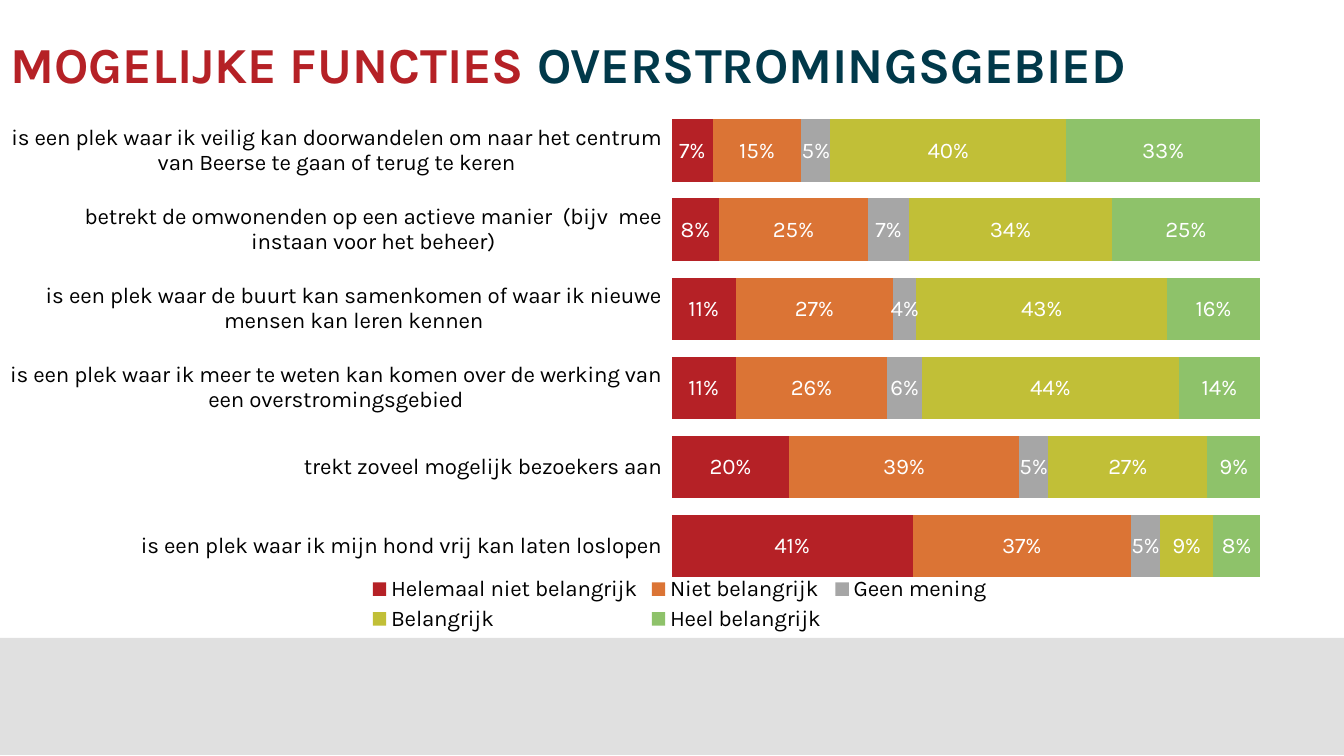
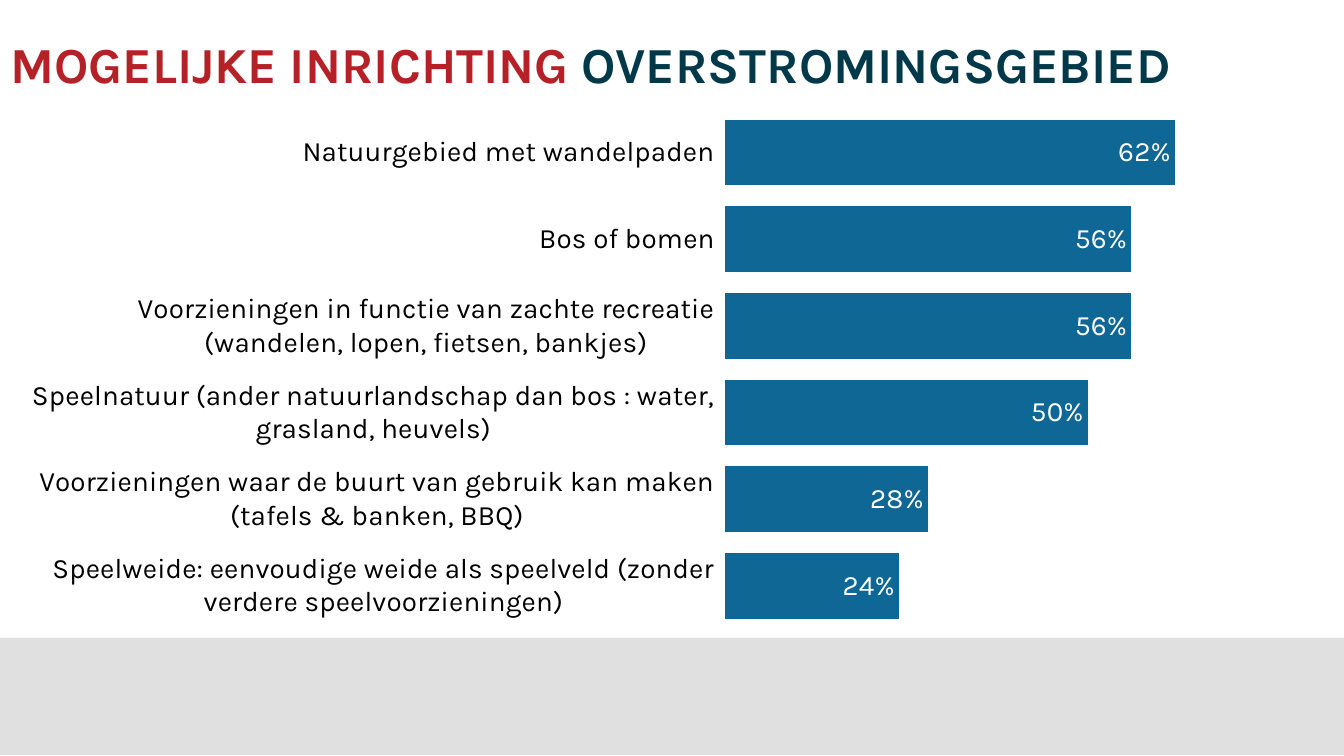
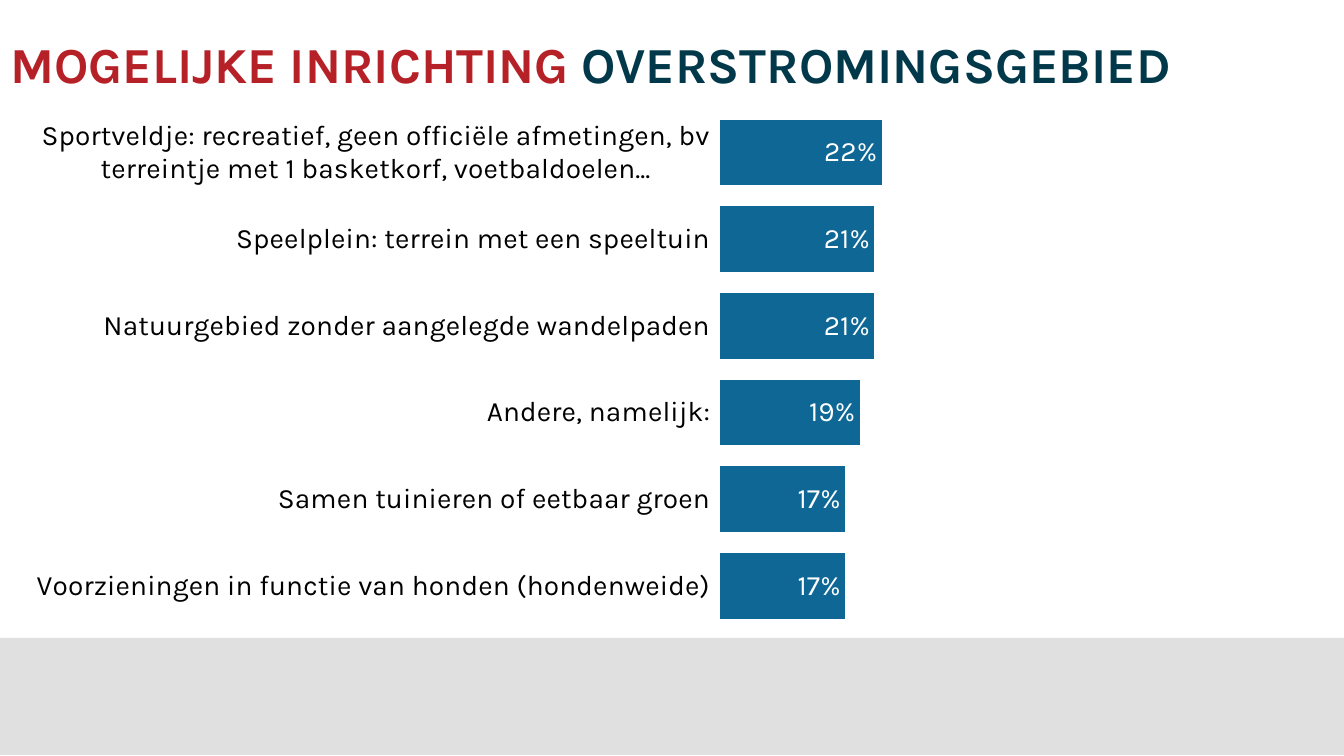
import dataclasses

import lxml.etree
import pptx
import pptx.chart.data
import pptx.dml.color
import pptx.enum.chart
import pptx.enum.shapes
import pptx.enum.text
import pptx.oxml.ns
import pptx.util


def color(value):
    return pptx.dml.color.RGBColor.from_string(value)


def px(length):
    return pptx.util.Emu(round(length * 914400 / 100.8))


@dataclasses.dataclass(frozen=True)
class Theme:
    font: str = "Karla"
    red: str = "B52126"
    navy: str = "01394A"
    orange: str = "DB7435"
    grey: str = "A6A6A6"
    olive: str = "C1BF37"
    green: str = "8EC26A"
    blue: str = "0E6794"
    black: str = "000000"
    white: str = "FFFFFF"
    title_size: int = 36
    stacked_size: int = 16
    bar_size: int = 20


theme = Theme()
qn = pptx.oxml.ns.qn
ChartType = pptx.enum.chart.XL_CHART_TYPE
LabelPosition = pptx.enum.chart.XL_LABEL_POSITION

importance = {
    "type": ChartType.BAR_STACKED_100,
    "frame": (10, 99, 1334, 537),
    "plot": (0.494, 0.023, 0.443, 0.883),
    "size": theme.stacked_size,
    "gap": 26,
    "overlap": 100,
    "maximum": 1,
    "format": "0%",
    "label": LabelPosition.CENTER,
    "legend": True,
}
preference = {
    "type": ChartType.BAR_CLUSTERED,
    "frame": (32, 102, 1223, 552),
    "plot": (0.563, 0.013, 0.419, 0.942),
    "size": theme.bar_size,
    "gap": 32,
    "overlap": 0,
    "maximum": 0.7,
    "format": "###0%",
    "label": LabelPosition.INSIDE_END,
    "legend": False,
}

pages = [
    (
        "MOGELIJKE FUNCTIES ",
        importance,
        [
            "is een plek waar ik veilig kan doorwandelen om naar het centrum van Beerse te gaan of terug te keren",
            "betrekt de omwonenden op een actieve manier  (bijv  mee instaan voor het beheer)",
            "is een plek waar de buurt kan samenkomen of waar ik nieuwe mensen kan leren kennen",
            "is een plek waar ik meer te weten kan komen over de werking van een overstromingsgebied",
            "trekt zoveel mogelijk bezoekers aan",
            "is een plek waar ik mijn hond vrij kan laten loslopen",
        ],
        [
            ("Helemaal niet belangrijk", theme.red, (0.07, 0.08, 0.11, 0.11, 0.2, 0.41)),
            ("Niet belangrijk", theme.orange, (0.15, 0.25, 0.27, 0.26, 0.39, 0.37)),
            ("Geen mening", theme.grey, (0.05, 0.07, 0.04, 0.06, 0.05, 0.05)),
            ("Belangrijk", theme.olive, (0.4, 0.34, 0.43, 0.44, 0.27, 0.09)),
            ("Heel belangrijk", theme.green, (0.33, 0.25, 0.16, 0.14, 0.09, 0.08)),
        ],
    ),
    (
        "MOGELIJKE INRICHTING ",
        preference,
        [
            "Natuurgebied met wandelpaden",
            "Bos of bomen",
            "Voorzieningen in functie van zachte recreatie (wandelen, lopen, fietsen, bankjes)",
            "Speelnatuur (ander natuurlandschap dan bos : water, grasland, heuvels)",
            "Voorzieningen waar de buurt van gebruik kan maken (tafels & banken, BBQ)",
            "Speelweide: eenvoudige weide als speelveld (zonder verdere speelvoorzieningen)",
        ],
        [("Series 1", theme.blue, (0.62, 0.56, 0.56, 0.5, 0.28, 0.24))],
    ),
    (
        "MOGELIJKE INRICHTING ",
        preference,
        [
            "Sportveldje: recreatief, geen officiële afmetingen, bv terreintje met 1 basketkorf, voetbaldoelen...",
            "Speelplein: terrein met een speeltuin",
            "Natuurgebied zonder aangelegde wandelpaden",
            "Andere, namelijk:",
            "Samen tuinieren of eetbaar groen",
            "Voorzieningen in functie van honden (hondenweide)",
        ],
        [("Series 1", theme.blue, (0.22, 0.21, 0.21, 0.19, 0.17, 0.17))],
    ),
]

presentation = pptx.Presentation()
presentation.slide_width = px(1344)
presentation.slide_height = px(756)
layout = presentation.slide_layouts.get_by_name("Title Only")

layout_title = layout.placeholders[0]
layout_title.left, layout_title.top = px(0), px(0)
layout_title.width, layout_title.height = px(1344), px(127)
layout_title.text_frame.vertical_anchor = pptx.enum.text.MSO_ANCHOR.MIDDLE

slides = [presentation.slides.add_slide(layout) for page in pages]

band = slides[0].shapes.add_shape(
    pptx.enum.shapes.MSO_SHAPE.RECTANGLE, px(0), px(638), px(1344), px(117)
)
band.shadow.inherit = False
band.line.fill.background()
band.fill.solid()
band.fill.fore_color.rgb = color(theme.black)
band_color = band.element.find(".//" + qn("a:srgbClr"))
lxml.etree.SubElement(band_color, qn("a:alpha"), val="12000")
layout.shapes.element.insert(2, band.element)

for slide, (topic, style, categories, series_rows) in zip(slides, pages):
    paragraph = slide.shapes.title.text_frame.paragraphs[0]
    paragraph.alignment = pptx.enum.text.PP_ALIGN.LEFT
    paragraph.font.name = theme.font
    paragraph.font.size = pptx.util.Pt(theme.title_size)
    paragraph.font.bold = True
    for text, shade in ((topic, theme.red), ("OVERSTROMINGSGEBIED", theme.navy)):
        run = paragraph.add_run()
        run.text = text
        run.font.color.rgb = color(shade)

    chart_data = pptx.chart.data.CategoryChartData(number_format=style["format"])
    chart_data.categories = categories
    for name, shade, values in series_rows:
        chart_data.add_series(name, values)
    frame = [px(length) for length in style["frame"]]
    chart = slide.shapes.add_chart(style["type"], *frame, chart_data).chart
    chart.has_title = False
    chart.font.name = theme.font
    chart.font.size = pptx.util.Pt(style["size"])
    chart.font.color.rgb = color(theme.black)

    chart.has_legend = style["legend"]
    if chart.has_legend:
        chart.legend.position = pptx.enum.chart.XL_LEGEND_POSITION.BOTTOM
        chart.legend.include_in_layout = False

    chart.category_axis.reverse_order = True
    chart.category_axis.format.line.fill.background()
    chart.category_axis.has_major_gridlines = False
    chart.value_axis.has_major_gridlines = False
    chart.value_axis.minimum_scale = 0
    chart.value_axis.maximum_scale = style["maximum"]
    chart.value_axis.visible = False

    plot = chart.plots[0]
    plot.vary_by_categories = False
    plot.gap_width = style["gap"]
    plot.overlap = style["overlap"]
    for series, (name, shade, values) in zip(plot.series, series_rows):
        series.format.fill.solid()
        series.format.fill.fore_color.rgb = color(shade)
        labels = series.data_labels
        labels.show_value = True
        labels.position = style["label"]
        labels.number_format = style["format"]
        labels.number_format_is_linked = False
        labels.font.name = theme.font
        labels.font.size = pptx.util.Pt(style["size"])
        labels.font.color.rgb = color(theme.white)

    chart_element = chart.element.find(qn("c:chart"))
    background = lxml.etree.Element(qn("c:spPr"))
    lxml.etree.SubElement(background, qn("a:noFill"))
    outline = lxml.etree.SubElement(background, qn("a:ln"))
    lxml.etree.SubElement(outline, qn("a:noFill"))
    chart_element.addnext(background)

    plot_area = chart_element.find(qn("c:plotArea"))
    for automatic in plot_area.findall(qn("c:layout")):
        plot_area.remove(automatic)
    plot_layout = lxml.etree.Element(qn("c:layout"))
    manual = lxml.etree.SubElement(plot_layout, qn("c:manualLayout"))
    settings = [("layoutTarget", "inner"), ("xMode", "edge"), ("yMode", "edge")]
    for tag, value in settings + list(zip("xywh", style["plot"])):
        lxml.etree.SubElement(manual, qn("c:" + tag), val=str(value))
    plot_area.insert(0, plot_layout)

presentation.save("out.pptx")
